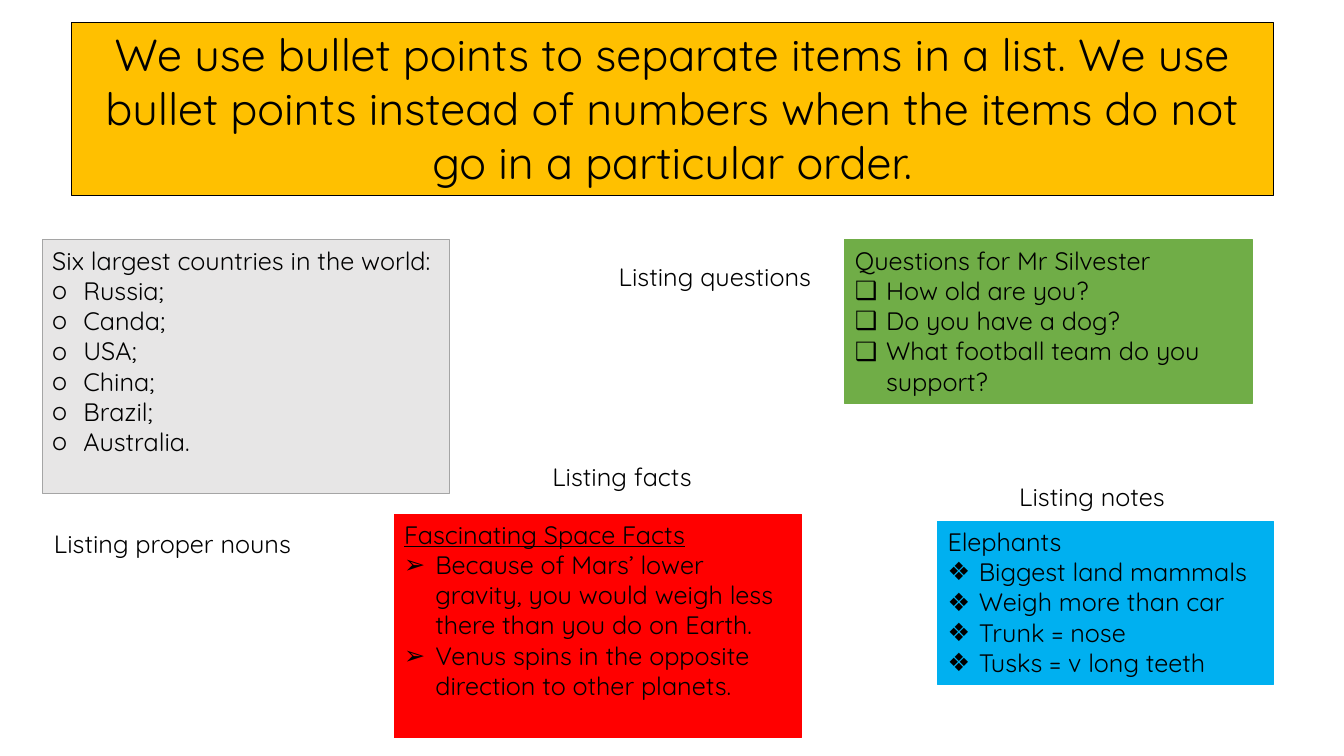
from lxml.etree import SubElement
from pptx import Presentation
from pptx.dml.color import RGBColor
from pptx.enum.shapes import MSO_SHAPE
from pptx.enum.text import MSO_ANCHOR, PP_ALIGN
from pptx.oxml.ns import qn
from pptx.util import Inches, Pt

FONT = "Quicksand"
BLACK = "000000"
HANGING = Inches(0.31)


def color(hex_code):
    return RGBColor.from_string(hex_code)


def add_run(paragraph, text, size=18, underline=None):
    run = paragraph.add_run()
    run.text = text
    run.font.name = FONT
    run.font.size = Pt(size)
    run.font.underline = underline
    run.font.color.rgb = color(BLACK)


def set_bullet(paragraph, bullet):
    properties = paragraph._p.get_or_add_pPr()
    properties.set("marL", str(HANGING))
    properties.set("indent", str(-HANGING))
    SubElement(properties, qn("a:buFont"), typeface=FONT)
    SubElement(properties, qn("a:buChar"), char=bullet)


def add_box(slide, bounds, fill, border):
    box = slide.shapes.add_shape(MSO_SHAPE.RECTANGLE, *map(Inches, bounds))
    box.shadow.inherit = False
    box.fill.solid()
    box.fill.fore_color.rgb = color(fill)
    box.line.color.rgb = color(border)
    box.line.width = Pt(0.75)
    frame = box.text_frame
    frame.word_wrap = True
    frame.vertical_anchor = MSO_ANCHOR.TOP
    return frame


def add_rule(slide, text):
    frame = add_box(slide, (0.71, 0.22, 11.92, 1.72), "FFC000", BLACK)
    statement = frame.paragraphs[0]
    statement.alignment = PP_ALIGN.CENTER
    add_run(statement, text, size=32)


def add_list(slide, bounds, fill, bullet, heading, items, border=None, underline=None):
    frame = add_box(slide, bounds, fill, border or fill)
    title = frame.paragraphs[0]
    title.alignment = PP_ALIGN.LEFT
    add_run(title, heading, underline=underline)
    for item in items:
        entry = frame.add_paragraph()
        entry.alignment = PP_ALIGN.LEFT
        set_bullet(entry, bullet)
        add_run(entry, item)


def add_label(slide, left, top, text, height=0.4):
    label = slide.shapes.add_textbox(
        Inches(left), Inches(top), Inches(2.58), Inches(height))
    label.text_frame.word_wrap = True
    caption = label.text_frame.paragraphs[0]
    caption.alignment = PP_ALIGN.CENTER
    add_run(caption, text)


def main():
    presentation = Presentation()
    presentation.slide_width = Inches(13.33)
    presentation.slide_height = Inches(7.5)
    slide = presentation.slides.add_slide(presentation.slide_layouts[6])

    add_rule(slide, "We use bullet points to separate items in a list. We use bullet "
                    "points instead of numbers when the items do not go in a "
                    "particular order.")
    add_list(slide, (0.42, 2.38, 4.04, 2.52), "E7E6E6", "o",
             "Six largest countries in the world:",
             ["Russia;", "Canda;", "USA;", "China;", "Brazil;", "Australia."],
             border="A5A5A5")
    add_list(slide, (8.38, 2.38, 4.04, 1.62), "70AD47", "❑",
             "Questions for Mr Silvester",
             ["How old are you?", "Do you have a dog?",
              "What football team do you support?"])
    add_list(slide, (3.91, 5.1, 4.04, 2.22), "FF0000", "➢",
             "Fascinating Space Facts",
             ["Because of Mars’ lower gravity, you would weigh less there than "
              "you do on Earth.",
              "Venus spins in the opposite direction to other planets."],
             underline=True)
    add_label(slide, 0.42, 5.19, "Listing proper nouns", height=0.71)
    add_label(slide, 4.88, 4.53, "Listing facts")
    add_label(slide, 5.8, 2.54, "Listing questions")
    add_list(slide, (9.3, 5.17, 3.33, 1.62), "00B0F0", "❖", "Elephants",
             ["Biggest land mammals", "Weigh more than car", "Trunk = nose",
              "Tusks = v long teeth"])
    add_label(slide, 9.54, 4.73, "Listing notes")

    presentation.save("out.pptx")


if __name__ == "__main__":
    main()
